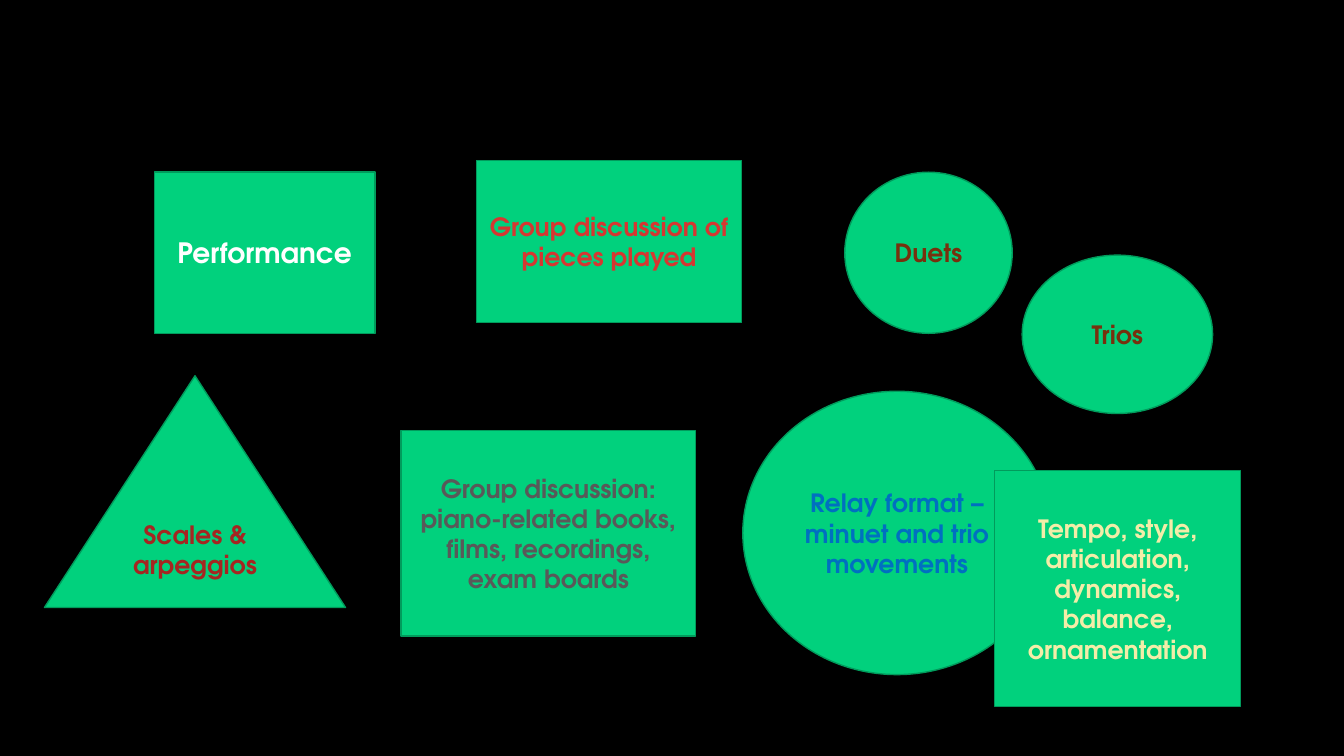
from dataclasses import dataclass

from pptx import Presentation
from pptx.dml.color import RGBColor
from pptx.enum.shapes import MSO_SHAPE
from pptx.enum.text import MSO_ANCHOR, PP_ALIGN
from pptx.util import Cm, Pt

RECTANGLE = MSO_SHAPE.RECTANGLE
OVAL = MSO_SHAPE.OVAL
TRIANGLE = MSO_SHAPE.ISOSCELES_TRIANGLE
MIDDLE = MSO_ANCHOR.MIDDLE
CENTER = PP_ALIGN.CENTER
BLANK_LAYOUT = 6


@dataclass(frozen=True)
class Theme:
    font: str = "TeX Gyre Adventor"
    text_size: int = 18
    lead_size: int = 20
    line_width: int = 1
    background: str = "000000"
    fill: str = "01D17D"
    outline: str = "019B5C"
    white: str = "FFFFFF"
    red: str = "D63731"
    brown: str = "77310E"
    dark_red: str = "A52621"
    grey: str = "595959"
    blue: str = "0070C0"
    cream: str = "F3EDA8"


class ActivitySlide:
    def __init__(self, presentation, theme):
        self.theme = theme
        self.slide = presentation.slides.add_slide(
            presentation.slide_layouts[BLANK_LAYOUT])
        background = self.slide.background.fill
        background.solid()
        background.fore_color.rgb = RGBColor.from_string(theme.background)

    def add_activity(self, kind, box, text, color, size=None):
        """Draw a labelled shape; box is left, top, width, height in cm."""
        theme = self.theme
        shape = self.slide.shapes.add_shape(kind, *(Cm(length) for length in box))
        shape.shadow.inherit = False
        shape.fill.solid()
        shape.fill.fore_color.rgb = RGBColor.from_string(theme.fill)
        shape.line.color.rgb = RGBColor.from_string(theme.outline)
        shape.line.width = Pt(theme.line_width)

        frame = shape.text_frame
        frame.word_wrap = True
        frame.vertical_anchor = MIDDLE
        paragraph = frame.paragraphs[0]
        paragraph.text = text
        paragraph.alignment = CENTER
        font = paragraph.font
        font.name = theme.font
        font.size = Pt(size or theme.text_size)
        font.bold = True
        font.color.rgb = RGBColor.from_string(color)


def main():
    presentation = Presentation()
    presentation.slide_width = Cm(33.87)
    presentation.slide_height = Cm(19.05)
    theme = Theme()
    slide = ActivitySlide(presentation, theme)

    slide.add_activity(RECTANGLE, (3.89, 4.34, 5.56, 4.06), "Performance",
                       theme.white, theme.lead_size)
    activities = [
        (RECTANGLE, (12.01, 4.04, 6.68, 4.09),
         "Group discussion of pieces played", theme.red),
        (OVAL, (21.29, 4.34, 4.22, 4.06), "Duets", theme.brown),
        (OVAL, (25.76, 6.43, 4.8, 3.99), "Trios", theme.brown),
        (TRIANGLE, (1.12, 9.47, 7.59, 5.84), "Scales & arpeggios",
         theme.dark_red),
        (RECTANGLE, (10.11, 10.85, 7.42, 5.18),
         "Group discussion: piano-related books, films, recordings, exam boards",
         theme.grey),
        (OVAL, (18.72, 9.86, 7.77, 7.14),
         "Relay format – minuet and trio movements", theme.blue),
        (RECTANGLE, (25.07, 11.86, 6.2, 5.94),
         "Tempo, style, articulation, dynamics, balance, ornamentation",
         theme.cream),
    ]
    for activity in activities:
        slide.add_activity(*activity)

    presentation.save("out.pptx")


if __name__ == "__main__":
    main()
